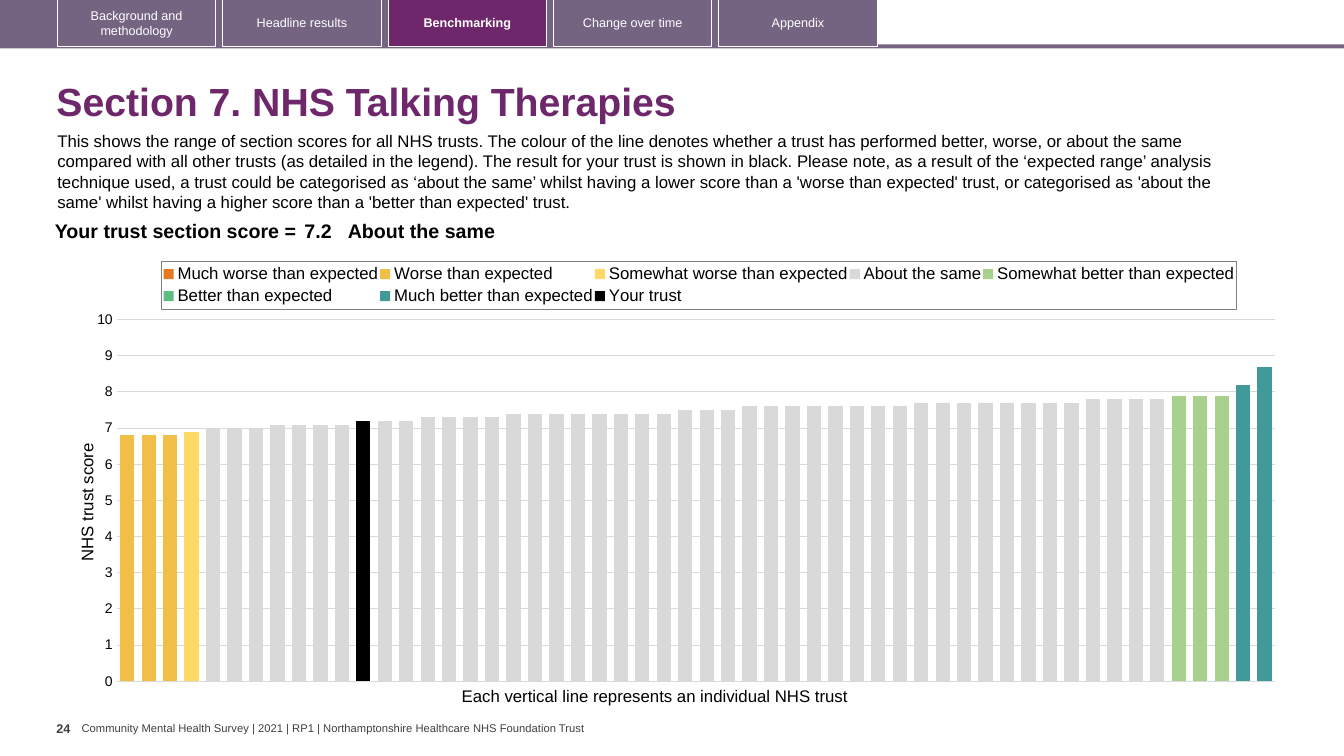
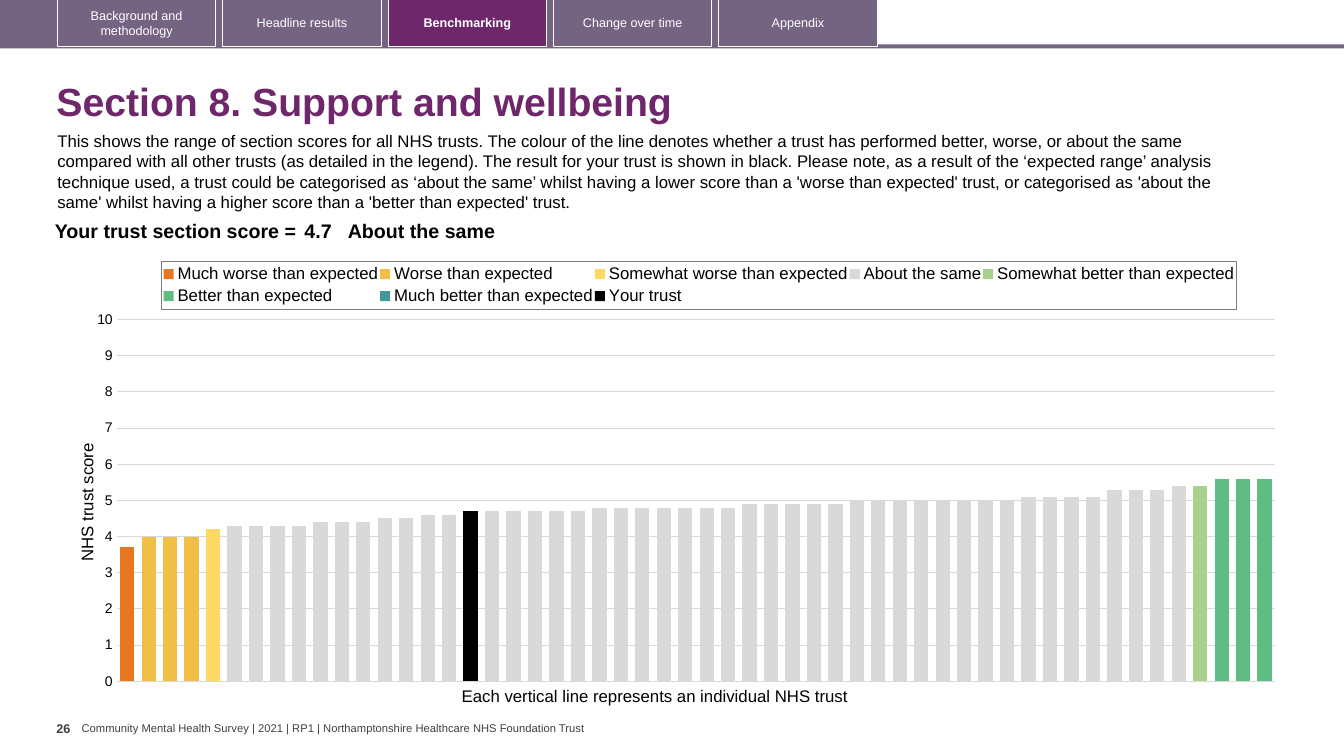
from copy import deepcopy
from dataclasses import dataclass

from lxml import etree
from pptx import Presentation
from pptx.chart.data import CategoryChartData
from pptx.dml.color import RGBColor
from pptx.enum.chart import XL_CHART_TYPE, XL_LEGEND_POSITION, XL_TICK_MARK
from pptx.enum.shapes import MSO_SHAPE
from pptx.enum.text import MSO_ANCHOR, PP_ALIGN
from pptx.oxml import parse_xml
from pptx.oxml.ns import nsdecls, qn
from pptx.util import Inches, Pt

RECT = MSO_SHAPE.RECTANGLE
COLUMNS = XL_CHART_TYPE.COLUMN_CLUSTERED
TOP = XL_LEGEND_POSITION.TOP
NO_TICK, TICK_OUT = XL_TICK_MARK.NONE, XL_TICK_MARK.OUTSIDE
MIDDLE = MSO_ANCHOR.MIDDLE
LEFT, CENTER, RIGHT = PP_ALIGN.LEFT, PP_ALIGN.CENTER, PP_ALIGN.RIGHT

PURPLE, MAUVE, GREY = "6D276A", "756382", "404040"
BLACK, WHITE, GRID, FRAME = "000000", "FFFFFF", "D9D9D9", "7F7F7F"

TITLE = {"size": Pt(28), "bold": True, "color": PURPLE}
BODY = {"size": Pt(12), "bold": False, "color": BLACK}
SCORE = {"size": Pt(14), "bold": True, "color": BLACK}
TICKS = {"size": Pt(10), "bold": False, "color": BLACK}
PAGE = {"size": Pt(9), "bold": True, "color": GREY}
FOOTER = {"size": Pt(8), "bold": False, "color": GREY}
TAB = {"size": Pt(9), "bold": False, "color": WHITE}

TABS = ["Background and methodology", "Headline results", "Benchmarking",
        "Change over time", "Appendix"]
CURRENT_TAB = "Benchmarking"
TAB_PITCH = 1.64
SURVEY = ("Community Mental Health Survey | 2021 | RP1 | "
          "Northamptonshire Healthcare NHS Foundation Trust")
INTRO = (
    "This shows the range of section scores for all NHS trusts. The colour of the line "
    "denotes whether a trust has performed better, worse, or about the same compared with "
    "all other trusts (as detailed in the legend). The result for your trust is shown in "
    "black. Please note, as a result of the ‘expected range’ analysis technique used, a "
    "trust could be categorised as ‘about the same’ whilst having a lower score than a "
    "'worse than expected' trust, or categorised as 'about the same' whilst having a higher "
    "score than a 'better than expected' trust.")
BAND_COLORS = {
    "Much worse than expected": "E87722",
    "Worse than expected": "F1BE48",
    "Somewhat worse than expected": "FFD966",
    "About the same": "D9D9D9",
    "Somewhat better than expected": "A9D18E",
    "Better than expected": "5FBD83",
    "Much better than expected": "419999",
}


@dataclass
class Section:
    """Scores are (score, number of trusts) runs per band, in ascending order."""
    title: str
    page: int
    trust_position: int
    trust_score: float
    verdict: str
    scores: dict[str, list[tuple[float, int]]]


SECTIONS = [
    Section("Section 7. NHS Talking Therapies", 24, 11, 7.2, "About the same", {
        "Worse than expected": [(6.8, 3)],
        "Somewhat worse than expected": [(6.9, 1)],
        "About the same": [(7, 3), (7.1, 4), (7.2, 3), (7.3, 4), (7.4, 8), (7.5, 3),
                           (7.6, 8), (7.7, 8), (7.8, 4)],
        "Somewhat better than expected": [(7.9, 3)],
        "Much better than expected": [(8.2, 1), (8.7, 1)],
    }),
    Section("Section 8. Support and wellbeing", 26, 16, 4.7, "About the same", {
        "Much worse than expected": [(3.7, 1)],
        "Worse than expected": [(4, 3)],
        "Somewhat worse than expected": [(4.2, 1)],
        "About the same": [(4.3, 4), (4.4, 3), (4.5, 2), (4.6, 2), (4.7, 6), (4.8, 7),
                           (4.9, 5), (5, 8), (5.1, 4), (5.3, 3), (5.4, 1)],
        "Somewhat better than expected": [(5.4, 1)],
        "Better than expected": [(5.6, 3)],
    }),
]


def rgb(color: str) -> RGBColor:
    return RGBColor.from_string(color)


def box(*lengths: float) -> list:
    return [Inches(n) for n in lengths]


def set_font(font, style: dict, name: str = "Arial") -> None:
    font.name = name
    for key, value in style.items():
        if key == "color":
            font.color.rgb = rgb(value)
        else:
            setattr(font, key, value)


def write(tf, text: str, style: dict, align=LEFT) -> None:
    p = tf.paragraphs[0]
    p.alignment = align
    r = p.add_run()
    r.text = text
    set_font(r.font, style)


def add_text(s, place: tuple, text: str, style: dict, wrap: bool = False,
             insets: tuple = (0.1, 0.05)):
    sp = s.shapes.add_textbox(*box(*place))
    tf = sp.text_frame
    tf.word_wrap = wrap
    tf.margin_left = tf.margin_right = Inches(insets[0])
    tf.margin_top = tf.margin_bottom = Inches(insets[1])
    write(tf, text, style)
    return sp


def add_rect(s, place: tuple, fill: str | None, line: str | None = None):
    sp = s.shapes.add_shape(RECT, *box(*place))
    sp.shadow.inherit = False
    if fill:
        sp.fill.solid()
        sp.fill.fore_color.rgb = rgb(fill)
    else:
        sp.fill.background()
    if line:
        sp.line.color.rgb = rgb(line)
        sp.line.width = Pt(0.75)
    else:
        sp.line.fill.background()
    return sp


def build_layout(layout, s) -> None:
    """Draw the tabs and footer through slide s, then move them to its layout."""
    footer = add_text(s, (0.81, 7.16, 5.05, 0.13), SURVEY, FOOTER, insets=(0, 0))
    footer.text_frame.vertical_anchor = MIDDLE
    frame = [footer, add_rect(s, (-0.03, 0.44, 13.36, 0.04), MAUVE),
             add_rect(s, (-0.03, 0, 8.73, 0.47), MAUVE)]
    for i, label in enumerate(TABS):
        current = label == CURRENT_TAB
        tab = add_rect(s, (0.57 + i * TAB_PITCH, -0.01, 1.57, 0.47),
                       PURPLE if current else None, WHITE)
        tab.text_frame.word_wrap = True
        tab.text_frame.vertical_anchor = MIDDLE
        write(tab.text_frame, label, {**TAB, "bold": current}, CENTER)
        frame.append(tab)
    for number, sp in enumerate(frame, 100):
        sp.element.nvSpPr.cNvPr.set("id", str(number))
        layout.shapes.element.append(sp.element)


def add_title(s, text: str) -> None:
    sp = s.shapes.title
    sp.left, sp.top, sp.width, sp.height = box(0.46, 0.67, 12.49, 0.72)
    sp.text_frame.vertical_anchor = MIDDLE
    write(sp.text_frame, text, TITLE)
    sp.text_frame.paragraphs[0].line_spacing = 0.9


def add_score(s, section: Section) -> None:
    table = s.shapes.add_table(1, 3, *box(0.35, 2.15, 11.69, 0.31)).table
    table.first_row = table.horz_banding = False
    cells = [("Your trust section score =", 2.63, RIGHT, 0.04),
             (str(section.trust_score), 0.47, LEFT, 0.04),
             (section.verdict, 8.59, LEFT, 0)]
    for i, (text, width, align, side) in enumerate(cells):
        table.columns[i].width = Inches(width)
        cell = table.cell(0, i)
        cell.fill.background()
        cell.margin_left = cell.margin_right = Inches(side)
        cell.margin_top = cell.margin_bottom = Inches(0.04)
        write(cell.text_frame, text, SCORE, align)


def set_layout(element, index: int, **values) -> None:
    """Give a chart part a manual layout; index is where c:layout belongs in it."""
    layout = element.find(qn("c:layout"))
    if layout is None:
        layout = etree.Element(qn("c:layout"))
        element.insert(index, layout)
    manual = etree.SubElement(layout, qn("c:manualLayout"))
    for tag, value in values.items():
        etree.SubElement(manual, qn(f"c:{tag}")).set("val", str(value))


def move_last_series_to_right_axis(plot_area) -> None:
    bars = plot_area.find(qn("c:barChart"))
    right = deepcopy(bars)
    bars.remove(bars.findall(qn("c:ser"))[-1])
    for ser in right.findall(qn("c:ser"))[:-1]:
        right.remove(ser)
    bars.addnext(right)
    cat, val = (deepcopy(plot_area.find(qn(tag))) for tag in ("c:catAx", "c:valAx"))
    ids = {"cat": "5001", "val": "5002"}
    for axis_id, value in zip(right.findall(qn("c:axId")), ids.values()):
        axis_id.set("val", value)
    for axis, own, other in ((cat, "cat", "val"), (val, "val", "cat")):
        axis.find(qn("c:axId")).set("val", ids[own])
        axis.find(qn("c:crossAx")).set("val", ids[other])
    for tag in ("c:majorGridlines", "c:title"):
        val.remove(val.find(qn(tag)))
    for tag, value in (("c:axPos", "r"), ("c:majorTickMark", TICK_OUT.xml_value),
                       ("c:tickLblPos", "none"), ("c:crosses", "max")):
        val.find(qn(tag)).set("val", value)
    plot_area.find(qn("c:valAx")).addnext(val)
    val.addnext(cat)


def chart_data(section: Section) -> CategoryChartData:
    total = sum(n for runs in section.scores.values() for _, n in runs)
    data = CategoryChartData()
    data.categories = [str(i + 1) for i in range(total)]
    start = 0
    for band in BAND_COLORS:
        values = [score for score, n in section.scores.get(band, []) for _ in range(n)]
        end = start + len(values)
        data.add_series(band, [None] * start + values + [None] * (total - end))
        start = end
    data.add_series("Your trust", [section.trust_score if i == section.trust_position
                                   else None for i in range(total)])
    return data


def add_score_chart(s, section: Section) -> None:
    chart = s.shapes.add_chart(COLUMNS, *box(0.67, 2.47, 12.15, 4.44),
                               chart_data(section)).chart
    set_font(chart.font, TICKS, "Calibri")
    chart.has_title = False
    plot = chart.plots[0]
    plot.gap_width, plot.overlap, plot.vary_by_categories = 50, 100, False
    for series, color in zip(plot.series, [*BAND_COLORS.values(), BLACK]):
        series.format.fill.solid()
        series.format.fill.fore_color.rgb = rgb(color)
    chart.category_axis.visible = False

    axis = chart.value_axis
    axis.minimum_scale, axis.maximum_scale, axis.major_unit = 0, 10, 1
    axis.major_tick_mark = axis.minor_tick_mark = NO_TICK
    axis.format.line.fill.background()
    axis.major_gridlines.format.line.color.rgb = rgb(GRID)
    axis.major_gridlines.format.line.width = Pt(0.75)
    axis.tick_labels.number_format = "General"
    axis.tick_labels.number_format_is_linked = False
    set_font(axis.tick_labels.font, TICKS)
    title = axis.axis_title
    write(title.text_frame, "NHS trust score", BODY, CENTER)
    body = title.element.find(".//" + qn("a:bodyPr"))
    body.set("rot", "-5400000")
    body.set("vert", "horz")
    set_layout(title.element, 1, xMode="edge", yMode="edge", x=0.005, y=0.427)

    chart.has_legend = True
    legend = chart.legend
    legend.position = TOP
    legend.include_in_layout = False
    set_font(legend.font, BODY)
    element = legend.font and chart.element.find(".//" + qn("c:legend"))
    set_layout(element, 1, xMode="edge", yMode="edge", x=0.077, y=0.027, w=0.877, h=0.108)
    element.find(qn("c:txPr")).addprevious(parse_xml(
        f'<c:spPr {nsdecls("c", "a")}><a:ln w="9525"><a:solidFill>'
        f'<a:srgbClr val="{FRAME}"/></a:solidFill></a:ln></c:spPr>'))

    plot_area = chart.element.find(".//" + qn("c:plotArea"))
    set_layout(plot_area, 0, layoutTarget="inner", xMode="edge", yMode="edge",
               x=0.04, y=0.158, w=0.946, h=0.808)
    move_last_series_to_right_axis(plot_area)


def main() -> None:
    prs = Presentation()
    prs.slide_width, prs.slide_height = box(13.33, 7.5)
    layout = prs.slide_layouts[5]
    for i, section in enumerate(SECTIONS):
        s = prs.slides.add_slide(layout)
        if i == 0:
            build_layout(layout, s)
        add_title(s, section.title)
        add_text(s, (0.56, 7.1, 0.25, 0.4), str(section.page), PAGE, insets=(0, 0.05))
        add_text(s, (0.47, 1.25, 12.13, 0.91), INTRO, BODY, wrap=True)
        add_text(s, (4.48, 6.75, 4.11, 0.3),
                 "Each vertical line represents an individual NHS trust", BODY)
        add_score_chart(s, section)
        add_score(s, section)
    prs.save("out.pptx")


if __name__ == "__main__":
    main()
